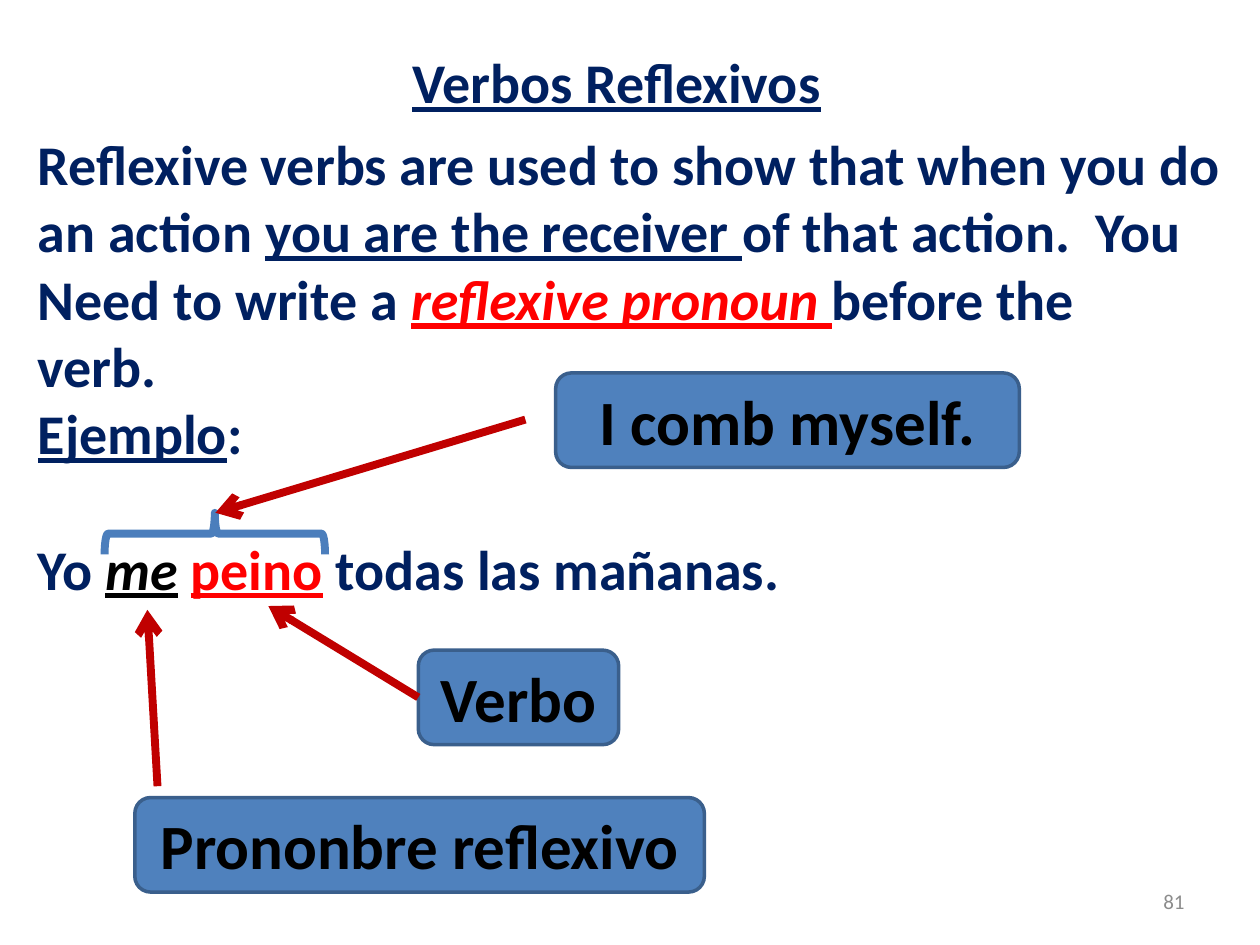
"""Build a slide that explains Spanish reflexive verbs with an annotated example."""
from lxml.etree import SubElement
from pptx import Presentation
from pptx.dml.color import RGBColor
from pptx.enum.shapes import MSO_CONNECTOR, MSO_SHAPE
from pptx.enum.text import MSO_ANCHOR, MSO_AUTO_SIZE, PP_ALIGN
from pptx.oxml.ns import qn
from pptx.util import Inches, Pt

NAVY = RGBColor(0x00, 0x20, 0x60)
RED = RGBColor(0xFF, 0x00, 0x00)
DARK_RED = RGBColor(0xC0, 0x00, 0x00)
BLACK = RGBColor(0x00, 0x00, 0x00)
GRAY = RGBColor(0x8C, 0x8C, 0x8C)
BOX_BLUE = RGBColor(0x4F, 0x81, 0xBD)
BOX_BORDER = RGBColor(0x3A, 0x5F, 0x8C)
BRACE_BLUE = RGBColor(0x4B, 0x7E, 0xBC)


def format_run(run, size, color, bold=True, underline=False, italic=False):
    run.font.name = "Calibri"
    run.font.size = Pt(size)
    run.font.color.rgb = color
    run.font.bold = bold
    run.font.underline = underline
    run.font.italic = italic


def place(shape, left, top, width, height):
    shape.left, shape.top = Inches(left), Inches(top)
    shape.width, shape.height = Inches(width), Inches(height)


presentation = Presentation()
presentation.slide_width = Inches(10)
presentation.slide_height = Inches(7.5)
slide = presentation.slides.add_slide(presentation.slide_layouts[1])

title = slide.shapes.title
place(title, 3.17, 0.33, 3.67, 0.64)
title.text_frame.text = "Verbos Reflexivos"
title.text_frame.auto_size = MSO_AUTO_SIZE.NONE
title.text_frame.vertical_anchor = MSO_ANCHOR.TOP
title.text_frame.paragraphs[0].alignment = PP_ALIGN.LEFT
format_run(title.text_frame.paragraphs[0].runs[0], 32, NAVY, underline=True)

PLAIN = (NAVY, False, False)
UNDERLINED = (NAVY, True, False)
explanation = [
    [("Reflexive verbs are used to show that when you do", PLAIN)],
    [("an action ", PLAIN), ("you are the receiver ", UNDERLINED), ("of that action.  You", PLAIN)],
    [("Need to write a ", PLAIN), ("reflexive pronoun ", (RED, True, True)), ("before the", PLAIN)],
    [("verb.", PLAIN)],
    [("Ejemplo", UNDERLINED), (":", PLAIN)],
    [("Yo ", PLAIN), ("me", (BLACK, True, True)), (" ", PLAIN),
     ("peino", (RED, True, False)), (" todas las mañanas.", PLAIN)],
]
body = slide.placeholders[1]
place(body, 0.2, 0.98, 9.78, 3.87)
text_frame = body.text_frame
text_frame.word_wrap = True
text_frame.auto_size = MSO_AUTO_SIZE.NONE
for index, pieces in enumerate(explanation):
    paragraph = text_frame.paragraphs[0] if index == 0 else text_frame.add_paragraph()
    properties = paragraph._p.get_or_add_pPr()
    properties.set("marL", "0")
    properties.set("indent", "0")
    SubElement(properties, qn("a:buNone"))
    paragraph.space_before = Pt(0)
    for text, (color, underline, italic) in pieces:
        run = paragraph.add_run()
        run.text = text
        format_run(run, 32, color, underline=underline, italic=italic)
text_frame.paragraphs[-1].space_before = Pt(39)

labels = {}
for text, left, top, width in [
    ("Verbo", 3.32, 5.16, 1.59),
    ("Prononbre reflexivo", 1.07, 6.33, 4.52),
    ("I comb myself.", 4.41, 2.96, 3.68),
]:
    label = slide.shapes.add_shape(
        MSO_SHAPE.ROUNDED_RECTANGLE, Inches(left), Inches(top), Inches(width), Inches(0.75))
    label.shadow.inherit = False
    label.fill.solid()
    label.fill.fore_color.rgb = BOX_BLUE
    label.line.color.rgb = BOX_BORDER
    label.line.width = Pt(2)
    label.text_frame.text = text
    label.text_frame.vertical_anchor = MSO_ANCHOR.MIDDLE
    label.text_frame.paragraphs[0].alignment = PP_ALIGN.CENTER
    format_run(label.text_frame.paragraphs[0].runs[0], 36, BLACK)
    labels[text] = label

brace = slide.shapes.add_shape(
    MSO_SHAPE.RIGHT_BRACE, Inches(1.54), Inches(3.36), Inches(0.33), Inches(1.75))
brace.rotation = 270
brace.shadow.inherit = False
brace.fill.background()
brace.line.color.rgb = BRACE_BLUE
brace.line.width = Pt(4.5)

arrows = []
for start_x, start_y, end_x, end_y in [
    (3.32, 5.54, 2.13, 4.81),
    (1.25, 6.24, 1.17, 4.84),
    (4.17, 3.33, 1.71, 4.07),
]:
    arrow = slide.shapes.add_connector(
        MSO_CONNECTOR.STRAIGHT, Inches(start_x), Inches(start_y), Inches(end_x), Inches(end_y))
    arrow.line.color.rgb = DARK_RED
    arrow.line.width = Pt(4.5)
    SubElement(arrow.line._get_or_add_ln(), qn("a:tailEnd"), type="arrow")
    SubElement(arrow._element.spPr, qn("a:effectLst"))
    arrows.append(arrow)
arrows[0].begin_connect(labels["Verbo"], 1)

number = slide.shapes.add_textbox(Inches(7.17), Inches(6.95), Inches(2.33), Inches(0.4))
number.text_frame.word_wrap = True
number.text_frame.text = "81"
number.text_frame.vertical_anchor = MSO_ANCHOR.MIDDLE
number.text_frame.paragraphs[0].alignment = PP_ALIGN.RIGHT
format_run(number.text_frame.paragraphs[0].runs[0], 12, GRAY, bold=False)

presentation.save("out.pptx")
